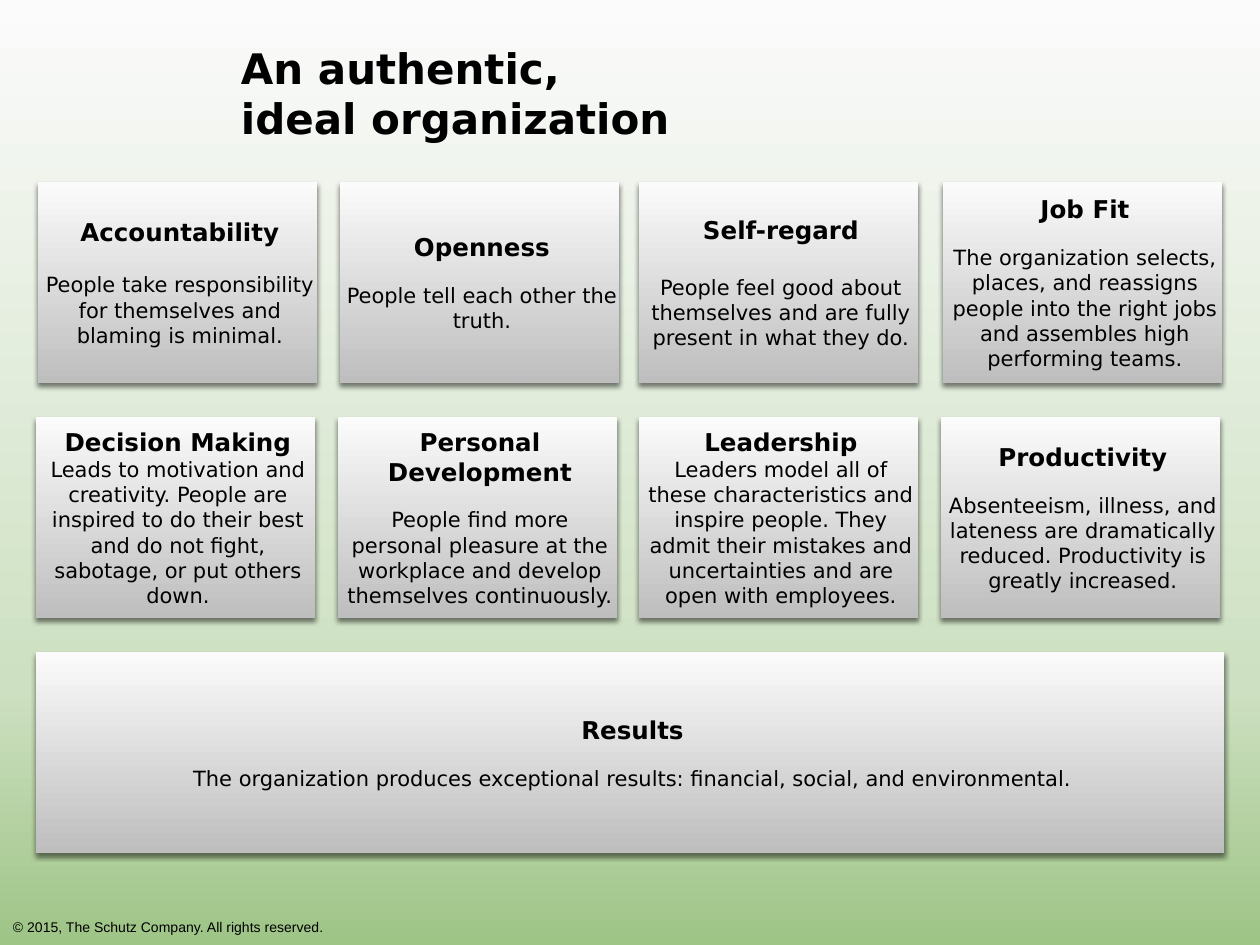
from lxml import etree
from pptx import Presentation
from pptx import util as u
from pptx.dml.color import RGBColor
from pptx.enum import shapes, text
from pptx.oxml.ns import qn

PX = u.Inches(10) / 1260
BLACK = RGBColor(0x00, 0x00, 0x00)
PALE = RGBColor(0xFB, 0xFB, 0xFB)
GREY = RGBColor(0xBE, 0xBE, 0xBE)
MIST = RGBColor(0xCD, 0xE0, 0xC1)
GREEN = RGBColor(0x9E, 0xC4, 0x86)

SANS = "DejaVu Sans"
TITLE = dict(name=SANS, size=u.Pt(24), bold=True)
HEADING = dict(name=SANS, size=u.Pt(14), bold=True)
BODY = dict(name=SANS, size=u.Pt(12), bold=False)
FOOTER = dict(name="Arial", size=u.Pt(8), bold=False)

CARD_W, CARD_H = 279, 201
FIRST_ROW_Y, ROW_PITCH = 182, 235

# Each row: cards as (left, width, heading, space before body in points, body)
ROWS = [
    [
        (38, CARD_W, "Accountability", 14.4,
         "People take responsibility for themselves and blaming is minimal."),
        (340, CARD_W, "Openness", 12, "People tell each other the truth."),
        (639, CARD_W, "Self-regard", 17,
         "People feel good about themselves and are fully present in what they do."),
        (943, CARD_W, "Job Fit", 12,
         "The organization selects, places, and reassigns people into the right "
         "jobs and assembles high performing teams."),
    ],
    [
        (36, CARD_W, "Decision Making", 0,
         "Leads to motivation and creativity. People are inspired to do their "
         "best and do not fight, sabotage, or put others down."),
        (338, CARD_W, "Personal Development", 12,
         "People find more personal pleasure at the workplace and develop "
         "themselves continuously."),
        (639, CARD_W, "Leadership", 0,
         "Leaders model all of these characteristics and inspire people. They "
         "admit their mistakes and uncertainties and are open with employees."),
        (941, CARD_W, "Productivity", 12,
         "Absenteeism, illness, and lateness are dramatically reduced. "
         "Productivity is greatly increased."),
    ],
    [
        (36, 1188, "Results", 12,
         "The organization produces exceptional results: financial, social, "
         "and environmental."),
    ],
]


def px(n):
    return int(n * PX)


def set_attrs(obj, values):
    for name, value in values.items():
        setattr(obj, name, value)


def set_frame(tf, margin, anchor):
    set_attrs(tf, dict(word_wrap=True, auto_size=text.MSO_AUTO_SIZE.NONE,
                       vertical_anchor=anchor))
    for side in ("left", "top", "right", "bottom"):
        setattr(tf, f"margin_{side}", px(margin))


def write(p, words, style, align=text.PP_ALIGN.LEFT, indent=0):
    p.text = words
    p.alignment = align
    p._p.get_or_add_pPr().set("marL", str(px(indent)))
    for r in p.runs:
        set_attrs(r.font, style)
        r.font.color.rgb = BLACK


def fill_downward(fill, element, stops):
    """Vertical gradient from (percent, colour) stops, top to bottom."""
    fill.gradient()
    fill.gradient_angle = 270
    stop_list = element.xpath(".//a:gsLst")[0]
    for old in list(stop_list):
        stop_list.remove(old)
    for percent, colour in stops:
        gs = etree.SubElement(stop_list, qn("a:gs"), pos=str(percent * 1000))
        etree.SubElement(gs, qn("a:srgbClr"), val=str(colour))


def add_shadow(sp):
    sp.shadow.inherit = False
    effects = sp.element.spPr.find(qn("a:effectLst"))
    shadow = etree.SubElement(
        effects, qn("a:outerShdw"), blurRad=str(u.Pt(3)), dist=str(u.Pt(2)),
        dir="5400000", algn="ctr", rotWithShape="0")
    colour = etree.SubElement(shadow, qn("a:srgbClr"), val=str(BLACK))
    etree.SubElement(colour, qn("a:alpha"), val="50000")


def add_title(s, x, y, w, h):
    sp = s.shapes.title
    set_attrs(sp, dict(left=px(x), top=px(y), width=px(w), height=px(h)))
    set_frame(sp.text_frame, 8, text.MSO_ANCHOR.MIDDLE)
    write(sp.text_frame.paragraphs[0], "An authentic,\videal organization", TITLE)


def add_card(s, x, y, w, h, heading, gap, body):
    sp = s.shapes.add_shape(shapes.MSO_SHAPE.RECTANGLE, px(x), px(y), px(w), px(h))
    fill_downward(sp.fill, sp.element, [(0, PALE), (100, GREY)])
    sp.line.fill.background()
    add_shadow(sp)
    tf = sp.text_frame
    set_frame(tf, 0, text.MSO_ANCHOR.MIDDLE)
    write(tf.paragraphs[0], heading, HEADING, text.PP_ALIGN.CENTER, 5)
    p = tf.add_paragraph()
    write(p, body, BODY, text.PP_ALIGN.CENTER, 5)
    p.space_before = u.Pt(gap)


def add_footer(s, x, y, w, h):
    tf = s.shapes.add_textbox(px(x), px(y), px(w), px(h)).text_frame
    set_frame(tf, 8, text.MSO_ANCHOR.TOP)
    write(tf.paragraphs[0], "© 2015, The Schutz Company. All rights reserved.",
          FOOTER, indent=5)


def main():
    prs = Presentation()
    prs.slide_width, prs.slide_height = u.Inches(10), u.Inches(7.5)
    s = prs.slides.add_slide(prs.slide_layouts[5])

    # Background
    fill_downward(s.background.fill, s.element, [(0, PALE), (73, MIST), (100, GREEN)])

    # Title, rows of cards, footer
    add_title(s, 233, 34, 790, 118)
    for i, row in enumerate(ROWS):
        for x, w, heading, gap, body in row:
            add_card(s, x, FIRST_ROW_Y + i * ROW_PITCH, w, CARD_H, heading, gap, body)
    add_footer(s, 0, 911, 1260, 30)

    prs.save("out.pptx")


if __name__ == "__main__":
    main()
